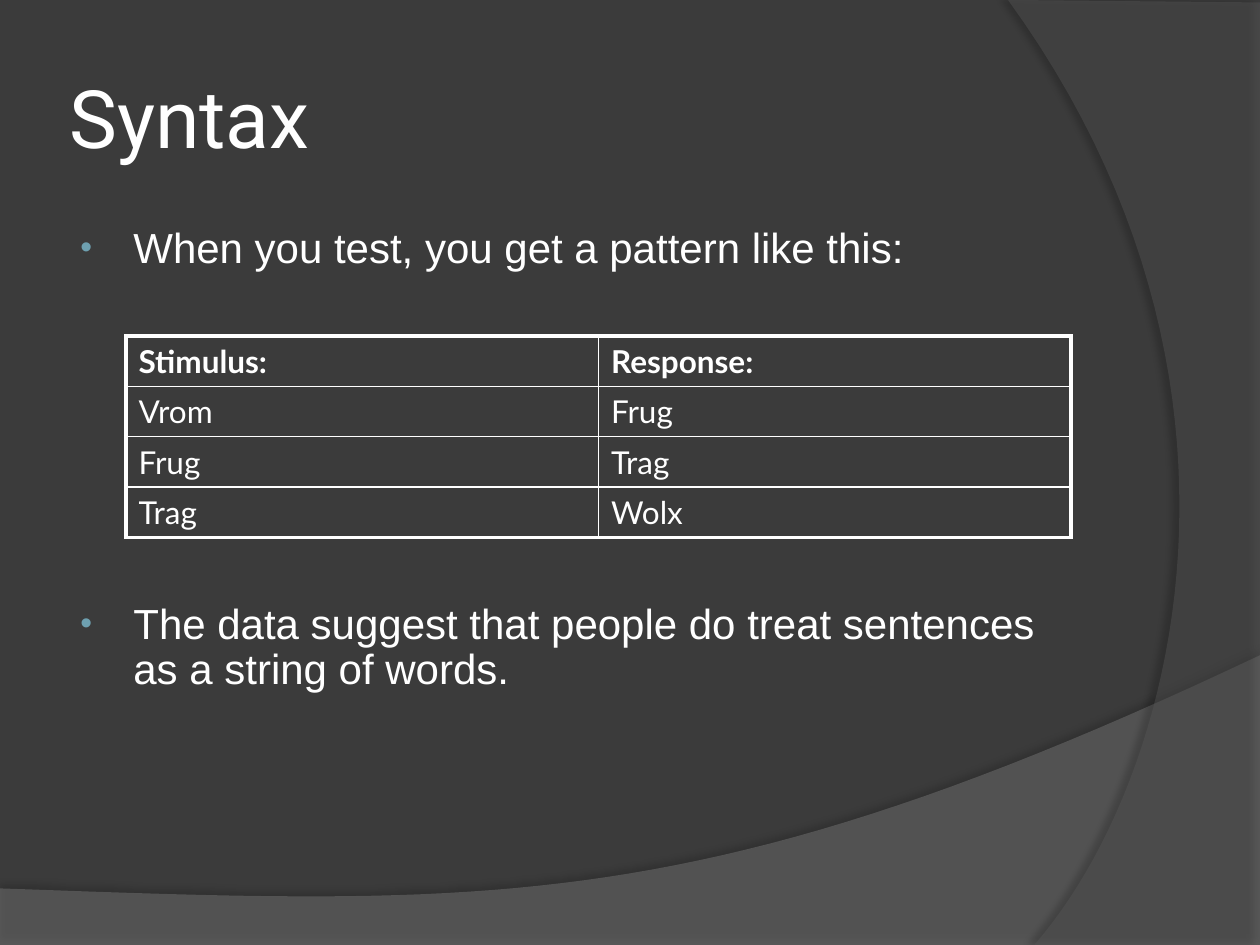
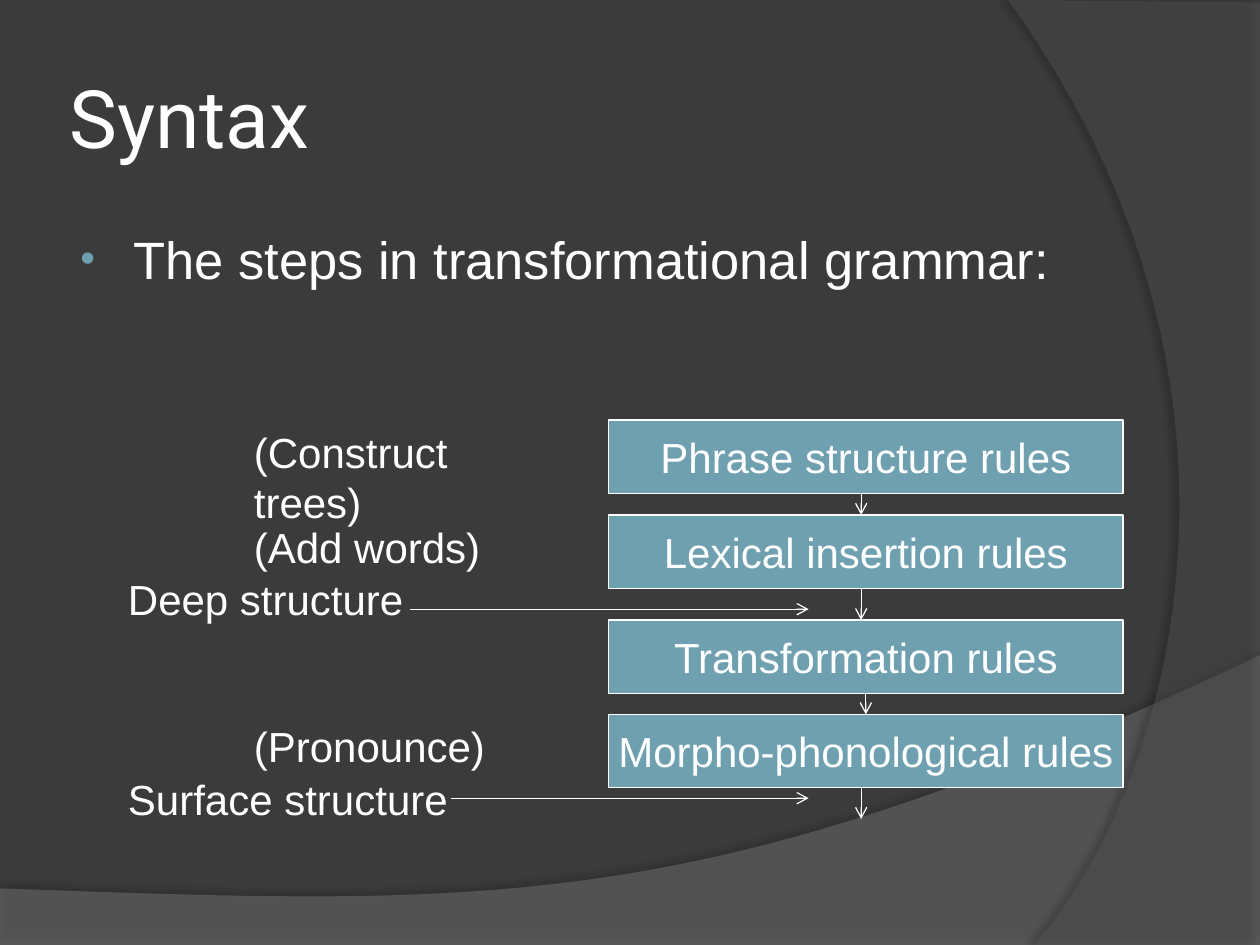
from pptx import Presentation
from pptx.dml.color import RGBColor
from pptx.enum.shapes import MSO_CONNECTOR, MSO_SHAPE
from pptx.enum.text import MSO_ANCHOR, PP_ALIGN
from pptx.oxml import parse_xml
from pptx.oxml.ns import nsdecls, qn
from pptx.util import Cm, Pt
from lxml.etree import SubElement

BACK, WHITE, BLUE = "3B3B3B", "FFFFFF", "6EA0B0"
HEAD, BODY, GRID = "Roboto", "Arial", "Lato"

# Boxes are left, top, width, height in cm
TITLE = (1.27, 0.76, 20.75, 3.18)
MAIN = (1.27, 4.45, 20.75, 12.57)
WAVE = (0, 13.21, 25.4, 5.84)
ARC = (20.32, 0, 5.08, 19.05)

PAIRS = [("Stimulus:", "Response:"), ("Vrom", "Frug"),
         ("Frug", "Trag"), ("Trag", "Wolx")]
# Rule, top, note, note width
STEPS = [("Phrase structure rules", 0, "(Construct trees)", 6.8),
         ("Lexical insertion rules", 1.91, "(Add words)", 5.08),
         ("Transformation rules", 4.03, None, 0),
         ("Morpho-phonological rules", 5.93, "(Pronounce)", 5.18)]
# Level, top, width, arrow start, arrow height
LEVELS = [("Deep structure", 2.96, 6.07, 5.93, 3.81),
          ("Surface structure", 6.99, 6.96, 6.77, 7.62)]


def color(code):
    return RGBColor.from_string(code)


def add_run(para, text, size, font=BODY, bold=False):
    run = para.add_run()
    run.text = text
    run.font.size = Pt(size)
    run.font.name = font
    run.font.bold = bold
    run.font.color.rgb = color(WHITE)


def add_box(slide, box, wrap=True):
    frame = slide.shapes.add_textbox(*map(Cm, box)).text_frame
    frame.word_wrap = wrap
    return frame


def add_label(slide, box, text):
    add_run(add_box(slide, box, False).paragraphs[0], text, 24)


def add_arrow(slide, x1, y1, x2, y2):
    line = slide.shapes.add_connector(
        MSO_CONNECTOR.STRAIGHT, Cm(x1), Cm(y1), Cm(x2), Cm(y2))
    line.line.color.rgb = color(WHITE)
    line.line.width = Pt(0.75)
    SubElement(line.line._get_or_add_ln(), qn("a:tailEnd"), type="arrow")
    SubElement(line._element.spPr, qn("a:effectLst"))
    return line


def curve(start, pull1, pull2, end, count=48):
    """Points along a cubic curve, start left out."""
    for step in range(1, count + 1):
        t = step / count
        u = 1 - t
        yield tuple(u**3 * a + 3 * u * u * t * b + 3 * u * t * t * c + t**3 * d
                    for a, b, c, d in zip(start, pull1, pull2, end))


def add_band(slide, box, edge, bend, fill, alpha, shade):
    """Draw straight corners, then a curve from the last corner."""
    left, top = box[:2]
    spots = [(Cm(left + x), Cm(top + y))
             for x, y in [*edge, *curve(edge[-1], *bend)]]
    form = slide.shapes.build_freeform(*spots[0])
    form.add_line_segments(spots[1:], close=True)
    band = form.convert_to_shape()
    band.fill.solid()
    band.fill.fore_color.rgb = color(fill)
    tint = band._element.spPr.find(qn("a:solidFill"))[0]
    SubElement(tint, qn("a:alpha"), val=str(alpha * 1000))
    band.line.fill.background()
    # Soft shadow along the curve
    band.shadow.inherit = False
    depth, gap, angle = shade
    glow = parse_xml(
        f'<a:outerShdw {nsdecls("a")} blurRad="{Pt(4)}" dist="{Pt(gap)}" '
        f'dir="{angle * 60000}" algn="ctr" rotWithShape="0">'
        f'<a:srgbClr val="000000"><a:alpha val="{depth * 1000}"/></a:srgbClr>'
        '</a:outerShdw>')
    band._element.spPr.find(qn("a:effectLst")).append(glow)


def add_title(slide, box, text):
    frame = add_box(slide, box)
    frame.vertical_anchor = MSO_ANCHOR.MIDDLE
    frame.margin_left = frame.margin_right = Cm(0.13)
    add_run(frame.paragraphs[0], text, 46, HEAD)


def add_points(slide, box, texts, size, space=1.0, gap=0):
    frame = add_box(slide, box)
    for i, text in enumerate(texts):
        para = frame.add_paragraph() if i else frame.paragraphs[0]
        para.line_spacing = space
        para.space_before = Pt(gap if i else size * 0.1)
        # Bullet with hanging indent
        props = para._p.get_or_add_pPr()
        props.set("marL", str(Cm(1.17)))
        props.set("indent", str(Cm(-1.07)))
        SubElement(SubElement(props, qn("a:buClr")), qn("a:srgbClr"), val=BLUE)
        SubElement(props, qn("a:buSzPct"), val="80000")
        SubElement(props, qn("a:buFont"), typeface=BODY)
        SubElement(props, qn("a:buChar"), char="•")
        add_run(para, text, size)


def add_grid(slide, box, rows):
    count, wide = len(rows), len(rows[0])
    grid = slide.shapes.add_table(count, wide, *map(Cm, box)).table
    grid.first_row = grid.horz_banding = False
    for r, row in enumerate(rows):
        for c, text in enumerate(row):
            cell = grid.cell(r, c)
            add_run(cell.text_frame.paragraphs[0], text, 18, GRID, r == 0)
            # Thick frame outside, thin lines inside
            outer = {"L": c == 0, "R": c == wide - 1,
                     "T": r == 0, "B": r == count - 1}
            props = cell._tc.get_or_add_tcPr()
            for side, thick in outer.items():
                props.append(parse_xml(
                    f'<a:ln{side} {nsdecls("a")} w="{Pt(2.25 if thick else 1)}">'
                    f'<a:solidFill><a:srgbClr val="{WHITE}"/></a:solidFill>'
                    f'</a:ln{side}>'))
            cell.fill.background()


def add_rule(slide, box, text):
    rect = slide.shapes.add_shape(MSO_SHAPE.RECTANGLE, *map(Cm, box))
    rect.shadow.inherit = False
    rect.fill.solid()
    rect.fill.fore_color.rgb = color(BLUE)
    rect.line.color.rgb = color(WHITE)
    rect.line.width = Pt(0.75)
    frame = rect.text_frame
    frame.word_wrap = False
    frame.vertical_anchor = MSO_ANCHOR.MIDDLE
    frame.paragraphs[0].alignment = PP_ALIGN.CENTER
    add_run(frame.paragraphs[0], text, 24)
    return rect


def add_flow(slide, box):
    left, top, width, height = box
    wide, high = 10.37, 1.48
    start = left + width - wide
    stem = left + 15.03
    rects = []
    # Rules with their notes
    for rule, y, note, span in STEPS:
        rects.append(add_rule(slide, (start, top + y, wide, high), rule))
        if note:
            add_label(slide, (left + 2.54, top + y, span, 1.27), note)
    # Arrows down; the one between the last two rules is centred
    ends = [step[1] for step in STEPS[1:]] + [height]
    for i, (step, end) in enumerate(zip(STEPS, ends)):
        line = add_arrow(slide, stem, top + step[1] + high, stem, top + end)
        if i == 2:
            line.begin_connect(rects[2], 2)
            line.end_connect(rects[3], 0)
    # Levels pointing into the flow
    for name, y, span, tail, mid in LEVELS:
        add_label(slide, (left, top + y, span, 1.27), name)
        add_arrow(slide, left + tail, top + mid, left + 13.97, top + mid)


def add_page(deck, title):
    slide = deck.slides.add_slide(deck.slide_layouts[6])
    slide.background.fill.solid()
    slide.background.fill.fore_color.rgb = color(BACK)
    add_band(slide, WAVE, [(0, 4.7), (0, 5.84), (25.4, 5.84), (25.4, 0)],
             [(14.2, 5.31), (9.93, 5.05), (0, 4.7)], "7C7C7C", 45, (35, 3.5, 270))
    add_band(slide, ARC, [(5.08, 0.05), (5.08, 19.05), (0.53, 19.05)],
             [(3.43, 15.72), (5.54, 7.62), (0, 0)], "595959", 40, (45, 4, 180))
    add_title(slide, TITLE, title)
    return slide


def main():
    deck = Presentation()
    deck.slide_width, deck.slide_height = Cm(25.4), Cm(19.05)

    # Test pattern
    slide = add_page(deck, "Syntax")
    add_points(slide, MAIN, [
        "When you test, you get a pattern like this:",
        "The data suggest that people do treat sentences as a string of words.",
    ], 24, 0.9, 189)
    add_grid(slide, (2.54, 6.77, 19.05, 4.06), PAIRS)

    # Grammar steps
    slide = add_page(deck, "Syntax")
    add_points(slide, MAIN, ["The steps in transformational grammar:"], 30)
    add_flow(slide, (2.33, 8.47, 20.31, 8.04))

    deck.save("out.pptx")


if __name__ == "__main__":
    main()
